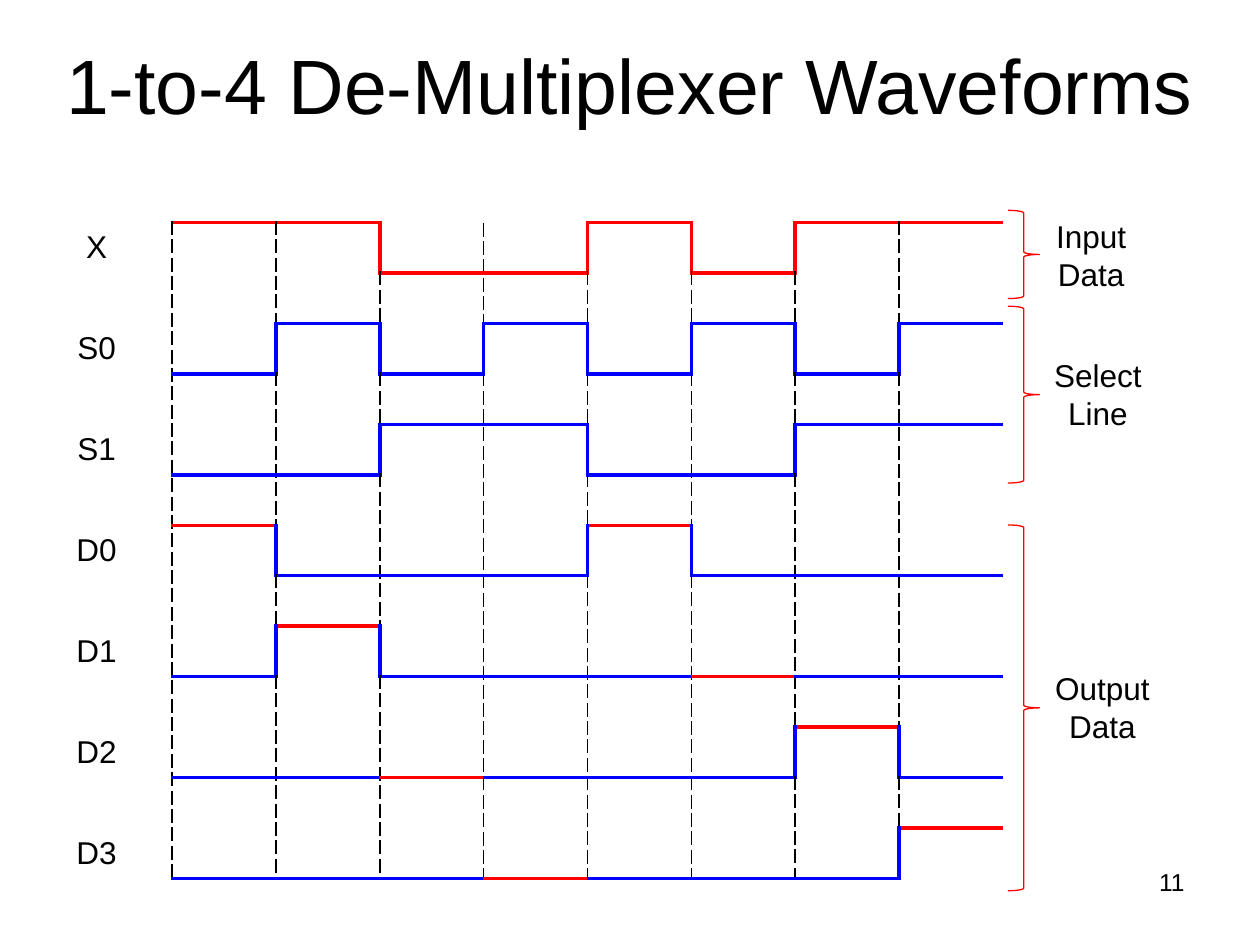
from dataclasses import dataclass
from typing import Optional

from lxml import etree
from pptx import Presentation
from pptx import util as u
from pptx.dml.color import RGBColor
from pptx.enum import shapes, text
from pptx.oxml import ns

BLACK = RGBColor(0x00, 0x00, 0x00)
WHITE = RGBColor(0xFF, 0xFF, 0xFF)
RED = RGBColor(0xFF, 0x00, 0x00)
BLUE = RGBColor(0x00, 0x00, 0xFF)
FONT = "Arial"
NO_STYLE = "{2D5ABB26-0587-4C30-8999-92F81FD0307C}"
STEPS = 8
LABEL_W, STEP_W, ROW_H = 86.4, 59.33, 28.8


@dataclass
class Line:
    color: RGBColor
    width: float = 2.25
    dashed: bool = False


@dataclass
class Signal:
    name: str
    levels: list[int]
    colors: list[RGBColor]  # colour of the level in each step
    edge: RGBColor


@dataclass
class Brace:
    label: str
    top: float
    height: float
    text_left: float
    text_top: float
    text_width: float


GRID = Line(BLACK, 1, True)
BRACES = [
    Brace("Output\nData", 300, 209, 595.44, 378.72, 69.12),
    Brace("Select\nLine", 175, 101, 595, 200.16, 64.8),
    Brace("Input\nData", 120.24, 50.4, 596.16, 120.4, 54.72),
]


def make_signals() -> list[Signal]:
    """Inputs are given; output Dn follows X while the select lines read n."""
    x = [1, 1, 0, 0, 1, 0, 1, 1]
    s0 = [t % 2 for t in range(STEPS)]
    s1 = [t // 2 % 2 for t in range(STEPS)]
    signals = [Signal("X", x, [RED] * STEPS, RED),
               Signal("S0", s0, [BLUE] * STEPS, BLUE),
               Signal("S1", s1, [BLUE] * STEPS, BLUE)]
    for n in range(4):
        on = [s0[t] + 2 * s1[t] == n for t in range(STEPS)]
        signals.append(Signal(f"D{n}", [x[t] if on[t] else 0 for t in range(STEPS)],
                              [RED if o else BLUE for o in on], BLUE))
    return signals


def set_font(p, size: float) -> None:
    p.font.name = FONT
    p.font.size = u.Pt(size)
    p.font.color.rgb = BLACK


def add_border(cell, side: str, line: Optional[Line]) -> None:
    """Draw one side of a cell, or state that it has no line."""
    ln = etree.SubElement(cell._tc.get_or_add_tcPr(), ns.qn(f"a:ln{side}"))
    if line is None:
        etree.SubElement(ln, ns.qn("a:noFill"))
        return
    ln.set("w", str(u.Pt(line.width)))
    fill = etree.SubElement(ln, ns.qn("a:solidFill"))
    etree.SubElement(fill, ns.qn("a:srgbClr"), val=str(line.color))
    etree.SubElement(ln, ns.qn("a:prstDash"), val="dash" if line.dashed else "solid")


def plan_borders(signals: list[Signal]) -> dict:
    """Map (row, column, side) to a line; neighbours share each line."""
    borders = {}
    rows = 2 * len(signals) - 1
    for row in range(rows):
        for t in range(STEPS):
            line = GRID
            if row % 2 == 0:
                sig = signals[row // 2]
                if t and sig.levels[t] != sig.levels[t - 1]:
                    line = Line(sig.edge)
                level = Line(sig.colors[t])
                if sig.levels[t]:
                    borders[row, t + 1, "T"] = borders[row - 1, t + 1, "B"] = level
                else:
                    borders[row, t + 1, "B"] = borders[row + 1, t + 1, "T"] = level
            borders[row, t, "R"] = borders[row, t + 1, "L"] = line
    return borders


def add_waveforms(slide, signals: list[Signal]) -> None:
    rows = 2 * len(signals) - 1
    frame = slide.shapes.add_table(rows, STEPS + 1, u.Pt(12), u.Pt(127.2),
                                   u.Pt(LABEL_W + STEPS * STEP_W), u.Pt(rows * ROW_H))
    table = frame.table
    table.first_row = table.horz_banding = False
    table._tbl.tblPr.find(ns.qn("a:tableStyleId")).text = NO_STYLE
    for c, col in enumerate(table.columns):
        col.width = u.Pt(STEP_W if c else LABEL_W)
    borders = plan_borders(signals)
    for r, row in enumerate(table.rows):
        row.height = u.Pt(ROW_H)
        for c, cell in enumerate(row.cells):
            for side in "LRTB":
                add_border(cell, side, borders.get((r, c, side)))
            cell.fill.solid()
            cell.fill.fore_color.rgb = WHITE
        if r % 2 == 0:
            cell = table.cell(r, 0)
            cell.text = signals[r // 2].name
            cell.vertical_anchor = text.MSO_ANCHOR.MIDDLE
            p = cell.text_frame.paragraphs[0]
            p.alignment = text.PP_ALIGN.CENTER
            set_font(p, 18)


def add_text(parent, label: str, box: tuple, size: float, align, wrap: bool):
    tb = parent.add_textbox(*(u.Pt(v) for v in box))
    tf = tb.text_frame
    tf.word_wrap = wrap
    tf.text = label
    for p in tf.paragraphs:
        p.alignment = align
        set_font(p, size)
    return tf


def add_brace(slide, b: Brace) -> None:
    group = slide.shapes.add_group_shape().shapes
    sp = group.add_shape(shapes.MSO_SHAPE.LEFT_BRACE, u.Pt(576), u.Pt(b.top),
                         u.Pt(18), u.Pt(b.height))
    sp._element.spPr.find(ns.qn("a:xfrm")).set("flipH", "1")
    sp.shadow.inherit = False
    sp.fill.background()
    sp.line.color.rgb = RED
    sp.line.width = u.Pt(0.75)
    tf = add_text(group, b.label, (b.text_left, b.text_top, b.text_width, 51.12),
                  18, text.PP_ALIGN.CENTER, False)
    tf.auto_size = text.MSO_AUTO_SIZE.SHAPE_TO_FIT_TEXT


def main() -> None:
    prs = Presentation()
    prs.slide_width, prs.slide_height = u.Pt(720), u.Pt(540)
    slide = prs.slides.add_slide(prs.slide_layouts[5])

    # Title
    title = slide.shapes.title
    title.left, title.top, title.width, title.height = (
        u.Pt(v) for v in (0, 0, 720, 96))
    tf = title.text_frame
    tf.text = "1-to-4 De-Multiplexer Waveforms"
    tf.vertical_anchor = text.MSO_ANCHOR.MIDDLE
    tf.paragraphs[0].alignment = text.PP_ALIGN.CENTER
    set_font(tf.paragraphs[0], 44)

    # Page number
    add_text(slide.shapes, "11", (516, 492, 168, 37.5), 14, text.PP_ALIGN.RIGHT, True)

    # Waveforms and their braces
    add_waveforms(slide, make_signals())
    for b in BRACES:
        add_brace(slide, b)

    prs.save("out.pptx")


if __name__ == "__main__":
    main()
